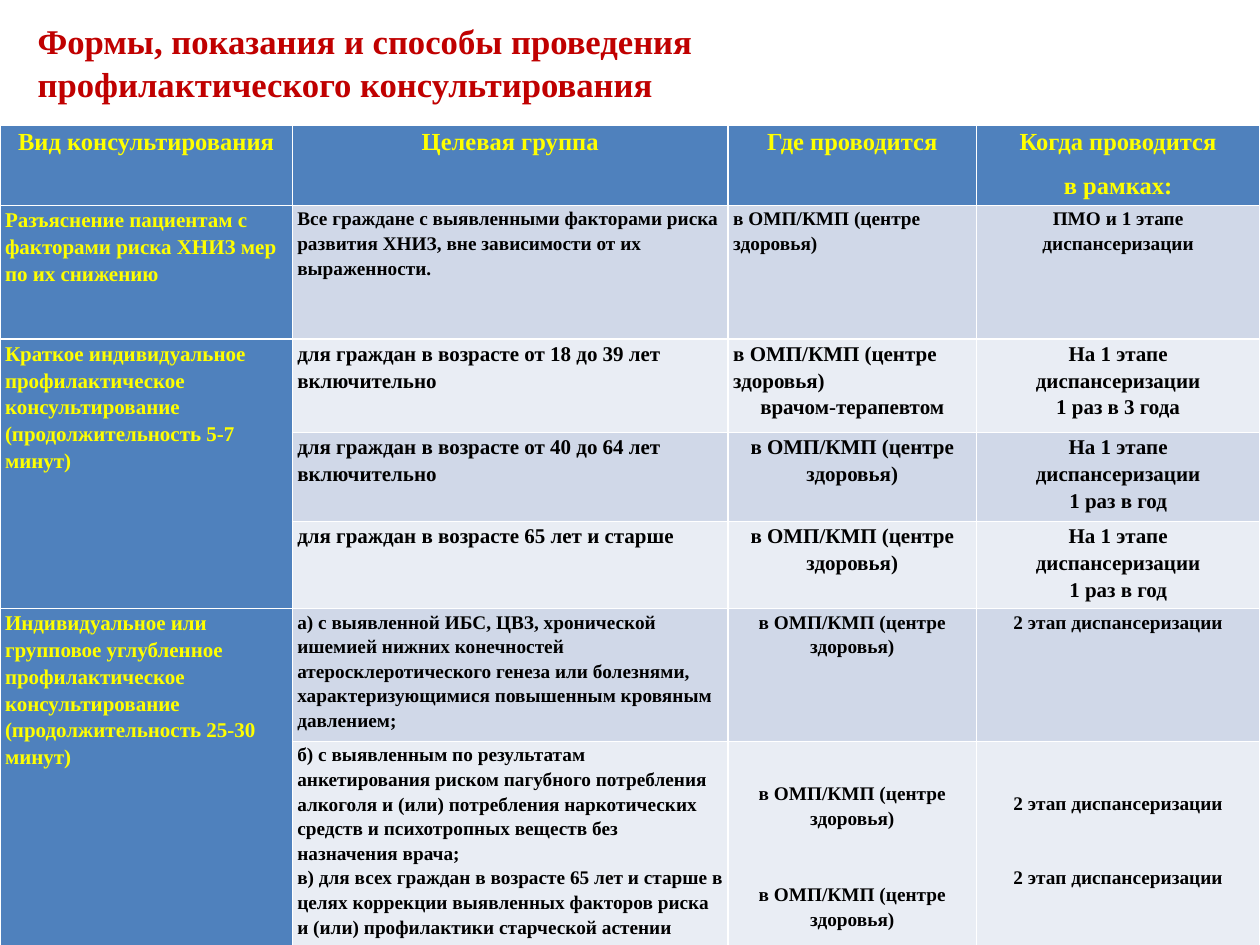
from pptx import Presentation
from pptx.dml.color import RGBColor
from pptx.enum.text import MSO_ANCHOR, PP_ALIGN
from pptx.util import Inches, Pt

LEFT, MID = PP_ALIGN.LEFT, PP_ALIGN.CENTER
CENTRE = MSO_ANCHOR.MIDDLE
FONT = "Times New Roman"
HUES = {"title": "C00000", "head": "4F81BD", "label": "FFFF00",
        "text": "000000", "odd": "D0D8E8", "even": "E9EDF4"}

COLS = [2.32, 3.46, 1.97, 2.25]
ROWS = [0.62, 1.06, 0.74, 0.71, 0.67, 0.98, 1.73]
SIZES = [14, 11, 12, 12, 12, 11, 11]
SPANS = [(2, 4), (5, 6)]

PLACE = "в ОМП/КМП (центре здоровья)"
STAGE = "На 1 этапе\nдиспансеризации\n"
SECOND = "2 этап диспансеризации"
CELLS = [
    ["Вид консультирования", "Целевая группа", "Где проводится",
     "Когда проводится\nв рамках:"],
    ["Разъяснение пациентам с факторами риска ХНИЗ мер по их снижению",
     "Все граждане с выявленными факторами риска\n"
     "развития ХНИЗ, вне зависимости от их\nвыраженности.",
     PLACE, "ПМО и 1 этапе\nдиспансеризации"],
    ["Краткое индивидуальное\nпрофилактическое\nконсультирование\n"
     "(продолжительность 5-7 минут)",
     "для граждан в возрасте от 18 до 39 лет\nвключительно",
     PLACE + "\nврачом-терапевтом", STAGE + "1 раз в 3 года"],
    ["", "для граждан в возрасте от 40 до 64 лет\nвключительно",
     PLACE, STAGE + "1 раз в год"],
    ["", "для граждан в возрасте 65 лет и старше",
     PLACE, STAGE + "1 раз в год"],
    ["Индивидуальное или\nгрупповое углубленное\nпрофилактическое\n"
     "консультирование\n(продолжительность 25-30 минут)",
     "а) с выявленной ИБС, ЦВЗ, хронической ишемией нижних конечностей "
     "атеросклеротического генеза или болезнями,\n"
     "характеризующимися повышенным кровяным давлением;",
     PLACE, SECOND],
    ["", "б) с выявленным по результатам анкетирования риском пагубного "
     "потребления алкоголя и (или) потребления наркотических средств и "
     "психотропных веществ без назначения врача;\n"
     "в) для всех граждан в возрасте 65 лет и старше в целях коррекции "
     "выявленных факторов риска и (или) профилактики старческой астении",
     PLACE + "\n" + PLACE, SECOND + "\n" + SECOND],
]
GAPS = {(0, 3): 7.5, (6, 2): 29.5, (6, 3): 28}
TOPS = {(6, 2): 0.31, (6, 3): 0.39}
ALIGNS = {(1, 2): [LEFT], (2, 2): [LEFT, MID]}


def write(frame, text, size, hue, aligns=(LEFT,), line=1.15, gap=0):
    frame.word_wrap = True
    for i, part in enumerate(text.split("\n")):
        para = frame.add_paragraph() if i else frame.paragraphs[0]
        para.alignment = aligns[min(i, len(aligns) - 1)]
        para.line_spacing = line
        if i and gap:
            para.space_before = Pt(gap)
        run = para.add_run()
        run.text = part
        run.font.name = FONT
        run.font.size = Pt(size)
        run.font.bold = True
        run.font.color.rgb = RGBColor.from_string(HUES[hue])


def add_title(slide, text):
    box = slide.shapes.add_textbox(
        Inches(0.2), Inches(0.13), Inches(6.93), Inches(0.71))
    box.text_frame.vertical_anchor = CENTRE
    write(box.text_frame, text, size=19.8, hue="title", line=1.05)


def fill_cell(cell, row, col):
    label = row == 0 or col == 0
    band = "head" if label else "odd" if row % 2 else "even"
    cell.fill.solid()
    cell.fill.fore_color.rgb = RGBColor.from_string(HUES[band])
    cell.margin_left = cell.margin_right = Inches(0.04)
    cell.margin_top = Inches(TOPS.get((row, col), 0))
    cell.margin_bottom = 0
    text = CELLS[row][col]
    if text:
        usual = [MID] if row == 0 or col > 1 else [LEFT]
        write(cell.text_frame, text,
              size=12 if row and col == 0 else SIZES[row],
              hue="label" if label else "text",
              aligns=ALIGNS.get((row, col), usual),
              gap=GAPS.get((row, col), 0))


def add_grid(slide):
    table = slide.shapes.add_table(
        len(ROWS), len(COLS), 0, Inches(0.99),
        Inches(sum(COLS)), Inches(sum(ROWS))).table
    for col, width in zip(table.columns, COLS):
        col.width = Inches(width)
    for row, height in zip(table.rows, ROWS):
        row.height = Inches(height)
    for first, last in SPANS:
        table.cell(first, 0).merge(table.cell(last, 0))
    for row in range(len(ROWS)):
        for col in range(len(COLS)):
            fill_cell(table.cell(row, col), row, col)


def main():
    deck = Presentation()
    deck.slide_width, deck.slide_height = Inches(10), Inches(7.5)
    slide = deck.slides.add_slide(deck.slide_layouts[6])
    add_title(slide, "Формы, показания и способы проведения "
                     "профилактического консультирования")
    add_grid(slide)
    deck.save("out.pptx")


if __name__ == "__main__":
    main()
